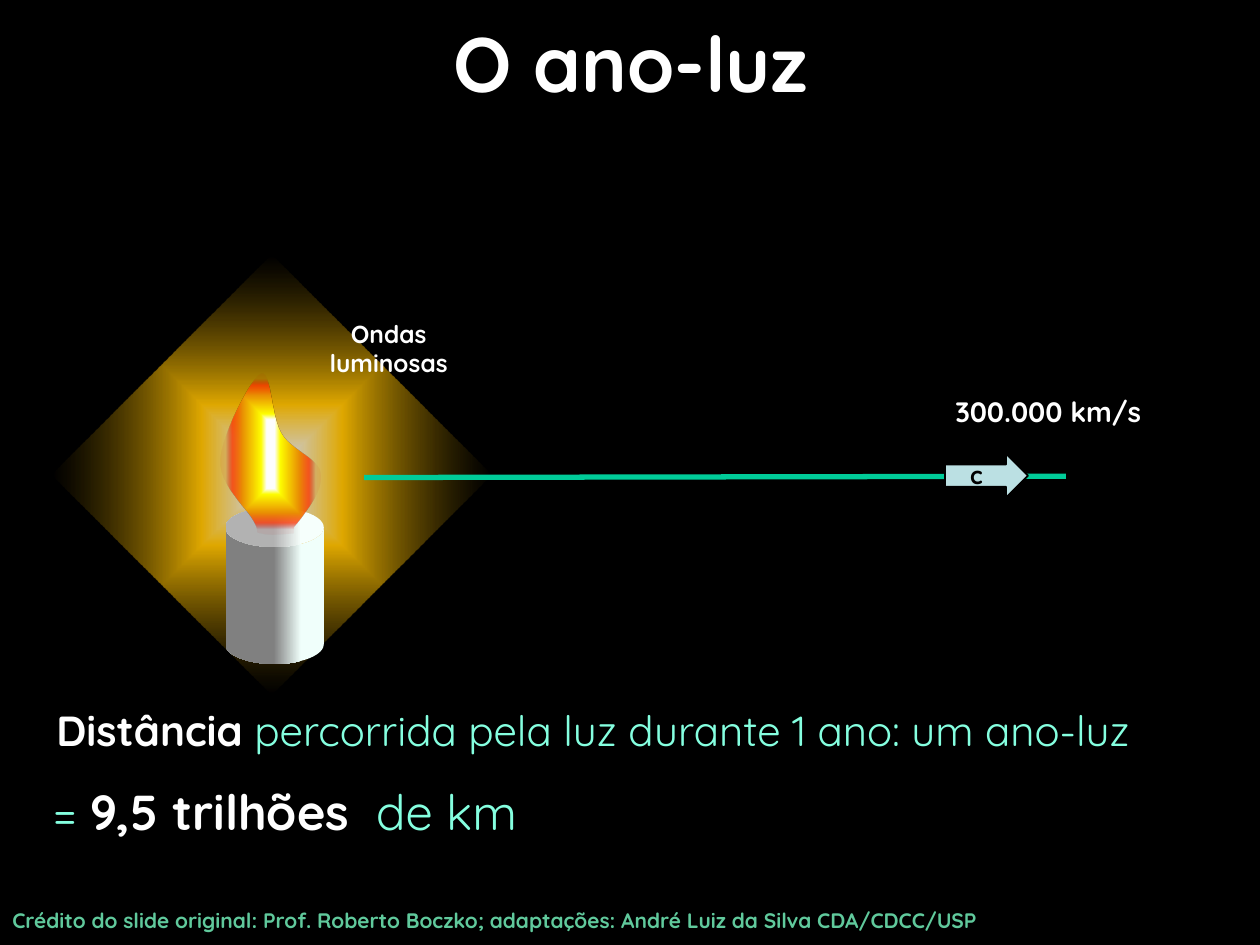
from lxml.etree import SubElement
from pptx import Presentation
from pptx.dml.color import RGBColor
from pptx.enum.shapes import MSO_CONNECTOR, MSO_SHAPE
from pptx.enum.text import MSO_ANCHOR, MSO_AUTO_SIZE, PP_ALIGN
from pptx.oxml.ns import qn
from pptx.util import Inches, Pt

FONT = "Quicksand"
WHITE, BLACK, MINT, GREEN = "FFFFFF", "000000", "85FFE0", "00CC99"

TITLE = ((0.11, 0.07, 9.8, 0.84), [[("O ano-luz", WHITE, True)]])
LABELS = [
    ((2.5, 2.48, 1.17, 0.58), [[("Ondas", WHITE, True)], [("luminosas", WHITE, True)]],
     dict(size=14, align=PP_ALIGN.CENTER, wrap=False)),
    ((7.59, 3.6, 0.32, 0.34), [[("c", BLACK, True)]],
     dict(size=14, align=PP_ALIGN.CENTER, wrap=False)),
    ((7.41, 3.08, 1.82, 0.37), [[("300.000 km/s", WHITE, True)]],
     dict(size=16, align=PP_ALIGN.CENTER)),
    ((0, 7.15, 10, 0.3),
     [[("Crédito do slide original: Prof. Roberto Boczko; adaptações: "
        "André Luiz da Silva CDA/CDCC/USP", "60C99C", True)]], dict(size=12)),
    ((0.35, 5.54, 9.24, 0.51),
     [[("Distância ", WHITE, True),
       ("percorrida pela luz durante 1 ano: um ano-luz", MINT, False)]], dict(size=24)),
    ((0.28, 6.15, 4.07, 0.57),
     [[("= ", MINT, False), ("9,5 trilhões ", WHITE, True), (" de km ", MINT, False)]],
     dict(size=28, align=PP_ALIGN.CENTER, wrap=False)),
]

GLOW_STOPS = [(7, WHITE, 79), (32, "FFC000", 87), (100, BLACK, 44)]
WAX_STOPS = [(23, "F0FFFB", 100), (51, "808080", 100)]
FLAME_STOPS = [(8, WHITE, 100), (19, "FFFF00", 100), (57, "EA8D04", 100),
               (76, "FF3300", 75), (89, "C00000", 5)]
FLAME_START = (2.33, 4.18)
FLAME_CURVES = [
    ((2.45, 4.03), (2.56, 3.88), (2.54, 3.76)),
    ((2.53, 3.64), (2.3, 3.57), (2.23, 3.44)),
    ((2.15, 3.31), (2.15, 2.93), (2.07, 2.97)),
    ((1.99, 3), (1.76, 3.46), (1.75, 3.65)),
    ((1.74, 3.85), (1.96, 4.03), (2.01, 4.13)),
    ((2.07, 4.23), (2.01, 4.22), (2.07, 4.23)),
    ((2.12, 4.25), (2.23, 4.24), (2.33, 4.23)),
]
CURVE_STEPS = 12


def rgb(color):
    return RGBColor.from_string(color)


def write(holder, paragraphs, size, align=PP_ALIGN.LEFT, wrap=True, anchor=MSO_ANCHOR.TOP):
    frame = holder.text_frame
    frame.word_wrap = wrap
    frame.auto_size = MSO_AUTO_SIZE.SHAPE_TO_FIT_TEXT
    frame.vertical_anchor = anchor
    for index, runs in enumerate(paragraphs):
        paragraph = frame.add_paragraph() if index else frame.paragraphs[0]
        paragraph.alignment = align
        for words, color, bold in runs:
            run = paragraph.add_run()
            run.text = words
            run.font.name, run.font.size, run.font.bold = FONT, Pt(size), bold
            run.font.color.rgb = rgb(color)


def fill_gradient(shape, stops, from_center):
    shape.shadow.inherit = False
    shape.line.fill.background()
    shape.fill.gradient()
    gradient = shape.element.spPr.find(qn("a:gradFill"))
    for child in list(gradient):
        gradient.remove(child)
    stop_list = SubElement(gradient, qn("a:gsLst"))
    for position, color, opacity in stops:
        stop = SubElement(stop_list, qn("a:gs"), pos=str(position * 1000))
        tint = SubElement(stop, qn("a:srgbClr"), val=color)
        if opacity < 100:
            SubElement(tint, qn("a:alpha"), val=str(opacity * 1000))
    if from_center:
        center = SubElement(gradient, qn("a:path"), path="shape")
        SubElement(center, qn("a:fillToRect"), {side: "50000" for side in "ltrb"})
    else:
        SubElement(gradient, qn("a:lin"), ang="0", scaled="1")


def curve_points(start, curves):
    for first, second, end in curves:
        for step in range(1, CURVE_STEPS + 1):
            t = step / CURVE_STEPS
            weights = (1 - t) ** 3, 3 * t * (1 - t) ** 2, 3 * t * t * (1 - t), t ** 3
            yield tuple(sum(w * point[axis] for w, point in
                            zip(weights, (start, first, second, end))) for axis in (0, 1))
        start = end


def main():
    deck = Presentation()
    deck.slide_width, deck.slide_height = Inches(10), Inches(7.5)
    slide = deck.slides.add_slide(deck.slide_layouts[5])
    slide.background.fill.solid()
    slide.background.fill.fore_color.rgb = rgb(BLACK)

    title = slide.shapes.title
    title_box, title_text = TITLE
    title.left, title.top, title.width, title.height = map(Inches, title_box)
    write(title, title_text, 44, PP_ALIGN.CENTER, anchor=MSO_ANCHOR.MIDDLE)

    glow = slide.shapes.add_shape(MSO_SHAPE.RECTANGLE, *map(Inches, (0.92, 2.53, 2.47, 2.47)))
    glow.rotation = 225
    fill_gradient(glow, GLOW_STOPS, True)

    candle = slide.shapes.add_group_shape()
    wax = candle.shapes.add_shape(MSO_SHAPE.CAN, *map(Inches, (1.79, 4.03, 0.78, 1.24)))
    wax.adjustments[0] = 0.4
    wax.element.spPr.xfrm.set("flipH", "1")
    fill_gradient(wax, WAX_STOPS, False)
    outline = candle.shapes.build_freeform(*FLAME_START, scale=Inches(1))
    outline = candle.shapes.build_freeform(*(round(v * 1000) for v in FLAME_START),
                                           scale=Inches(1) / 1000)
    outline.add_line_segments([(round(x * 1000), round(y * 1000))
                               for x, y in curve_points(FLAME_START, FLAME_CURVES)])
    fill_gradient(outline.convert_to_shape(), FLAME_STOPS, True)

    ray = slide.shapes.add_connector(MSO_CONNECTOR.STRAIGHT,
                                     *map(Inches, (8.46, 3.78, 2.89, 3.79)))
    ray.line.color.rgb = rgb(GREEN)
    ray.line.width = Pt(3)
    SubElement(ray.element.spPr, qn("a:effectLst"))

    speed = slide.shapes.add_shape(MSO_SHAPE.LEFT_ARROW, *map(Inches, (7.5, 3.6, 0.66, 0.35)))
    speed.element.spPr.xfrm.set("flipH", "1")
    speed.shadow.inherit = False
    speed.fill.solid()
    speed.fill.fore_color.rgb = rgb("BBE0E3")
    speed.line.color.rgb = rgb(BLACK)
    speed.line.width = Pt(1)

    for box, paragraphs, style in LABELS:
        write(slide.shapes.add_textbox(*map(Inches, box)), paragraphs, **style)

    deck.save("out.pptx")


if __name__ == "__main__":
    main()
